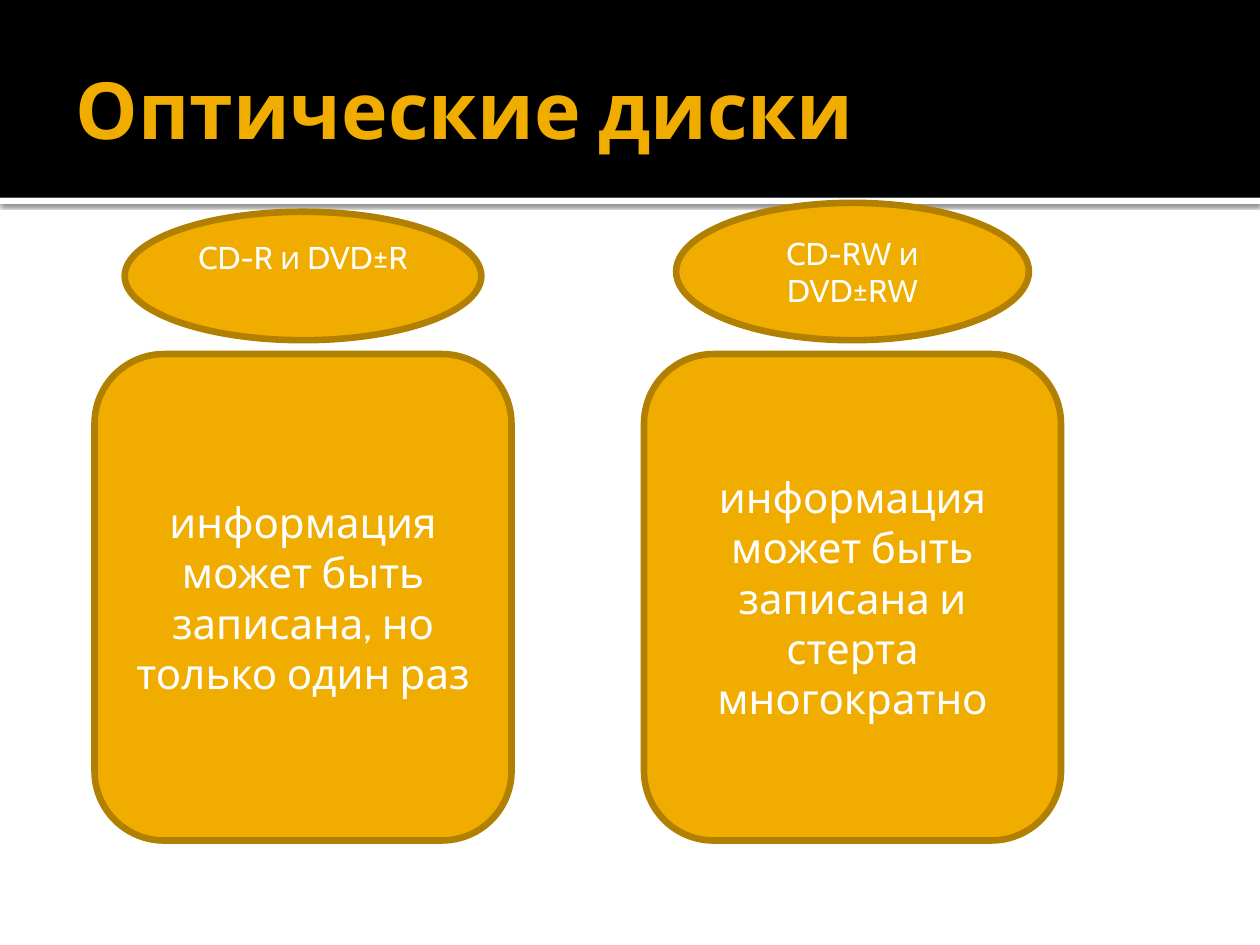
"""Build a slide that compares write-once and rewritable optical discs."""
from dataclasses import dataclass

from lxml import etree
from pptx import Presentation
from pptx.dml.color import RGBColor
from pptx.enum.shapes import MSO_SHAPE
from pptx.enum.text import MSO_ANCHOR, PP_ALIGN
from pptx.oxml.ns import qn
from pptx.shapes.autoshape import Shape
from pptx.slide import Slide
from pptx.text.text import TextFrame
from pptx.util import Pt

RECTANGLE = MSO_SHAPE.RECTANGLE
ROUNDED = MSO_SHAPE.ROUNDED_RECTANGLE
OVAL = MSO_SHAPE.OVAL
MIDDLE = MSO_ANCHOR.MIDDLE
LEFT = PP_ALIGN.LEFT
CENTER = PP_ALIGN.CENTER

BLACK = RGBColor(0x00, 0x00, 0x00)
WHITE = RGBColor(0xFF, 0xFF, 0xFF)
GOLD = RGBColor(0xF0, 0xAD, 0x00)
BROWN = RGBColor(0xB2, 0x80, 0x00)

FONT = "Cabin"
SLIDE_WIDTH, SLIDE_HEIGHT = 720, 540
HEADER_HEIGHT, STRIP_HEIGHT = 113, 3.6
PANEL_TOP, PANEL_WIDTH, PANEL_HEIGHT = 202.3, 238.3, 278
OVAL_BOTTOM = 194.4


@dataclass
class Disc:
    name: str
    description: str
    left: float
    oval_width: float
    oval_height: float
    bottom_inset: float = 3.6


DISCS = [
    Disc("CD-R и DVD±R", "информация может быть записана, но только один раз",
         54, 203.8, 73.4, 25.6),
    Disc("CD-RW и DVD±RW", "информация может быть записана и стерта многократно",
         368, 201.6, 78.5),
]


def add_shape(slide: Slide, kind: MSO_SHAPE, left: float, top: float,
              width: float, height: float, color: RGBColor) -> Shape:
    """Add a filled shape with no line or shadow."""
    shape = slide.shapes.add_shape(kind, Pt(left), Pt(top), Pt(width), Pt(height))
    shape.shadow.inherit = False
    shape.fill.solid()
    shape.fill.fore_color.rgb = color
    shape.line.fill.background()
    return shape


def write_text(frame: TextFrame, text: str, alignment: PP_ALIGN,
               color: RGBColor, **font_format: object) -> None:
    """Write one vertically centred paragraph."""
    frame.text = text
    frame.word_wrap = True
    frame.vertical_anchor = MIDDLE
    paragraph = frame.paragraphs[0]
    paragraph.alignment = alignment
    font = paragraph.runs[0].font
    font.color.rgb = color
    for name, value in {"name": FONT, **font_format}.items():
        setattr(font, name, value)


def add_label(slide: Slide, kind: MSO_SHAPE, left: float, top: float,
              width: float, height: float, text: str, size: float) -> Shape:
    """Add an outlined gold shape with centred white text."""
    shape = add_shape(slide, kind, left, top, width, height, GOLD)
    shape.line.color.rgb = BROWN
    shape.line.width = Pt(3.78)
    write_text(shape.text_frame, text, CENTER, WHITE, size=Pt(size))
    return shape


def add_drop_shadow(shape: Shape) -> None:
    """Give a shape a soft shadow below it."""
    effects = shape.element.spPr.find(qn("a:effectLst"))
    shadow = etree.SubElement(effects, qn("a:outerShdw"), blurRad=str(Pt(2.5)),
                              dist=str(Pt(0.8)), dir="5400000", algn="tl", rotWithShape="0")
    color = etree.SubElement(shadow, qn("a:srgbClr"), val=str(BLACK))
    etree.SubElement(color, qn("a:alpha"), val="60000")


def add_header(slide: Slide) -> None:
    """Draw the header band with the title over it."""
    strip = add_shape(slide, RECTANGLE, 0, HEADER_HEIGHT, SLIDE_WIDTH, STRIP_HEIGHT, WHITE)
    add_drop_shadow(strip)
    add_shape(slide, RECTANGLE, 0, 0, SLIDE_WIDTH, HEADER_HEIGHT, BLACK)
    title = slide.shapes.title
    title.element.getparent().append(title.element)
    box = {"left": 36, "top": 12.2, "width": 648, "height": 98.6}
    for name, value in box.items():
        setattr(title, name, Pt(value))
    frame = title.text_frame
    insets = {"margin_left": 7.2, "margin_top": 3.6, "margin_right": 3.6, "margin_bottom": 3.6}
    for name, value in insets.items():
        setattr(frame, name, Pt(value))
    write_text(frame, "Оптические диски", LEFT, GOLD, size=Pt(45), bold=True)


def add_disc(slide: Slide, disc: Disc) -> None:
    """Draw a description panel and the disc name centred above it."""
    add_label(slide, ROUNDED, disc.left, PANEL_TOP, PANEL_WIDTH, PANEL_HEIGHT,
              disc.description, 24)
    oval_left = disc.left + (PANEL_WIDTH - disc.oval_width) / 2
    oval = add_label(slide, OVAL, oval_left, OVAL_BOTTOM - disc.oval_height,
                     disc.oval_width, disc.oval_height, disc.name, 18)
    oval.text_frame.margin_bottom = Pt(disc.bottom_inset)


def main() -> None:
    """Create and save the presentation."""
    presentation = Presentation()
    presentation.slide_width = Pt(SLIDE_WIDTH)
    presentation.slide_height = Pt(SLIDE_HEIGHT)
    slide = presentation.slides.add_slide(presentation.slide_layouts[5])
    add_header(slide)
    for disc in DISCS:
        add_disc(slide, disc)
    presentation.save("out.pptx")


if __name__ == "__main__":
    main()
